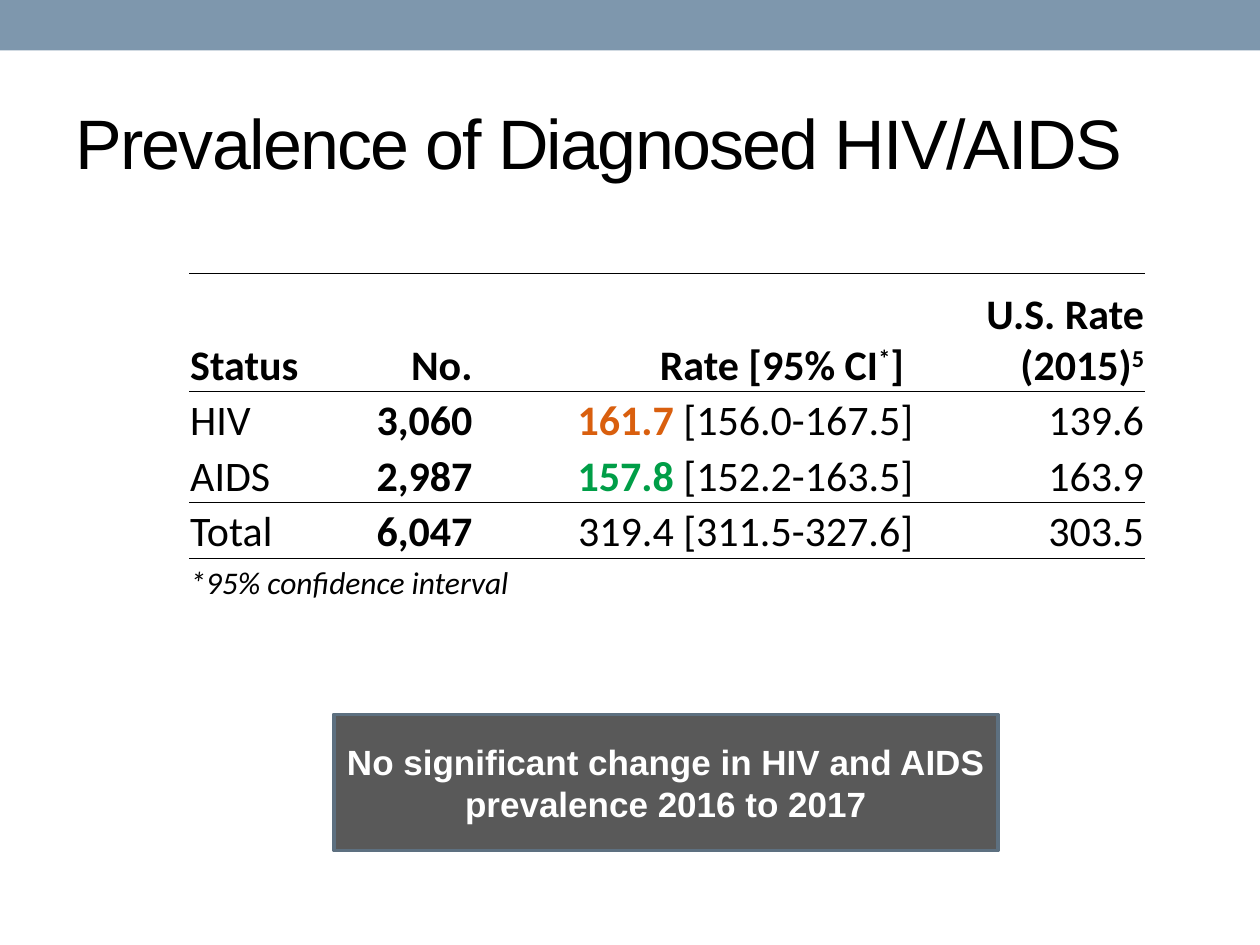
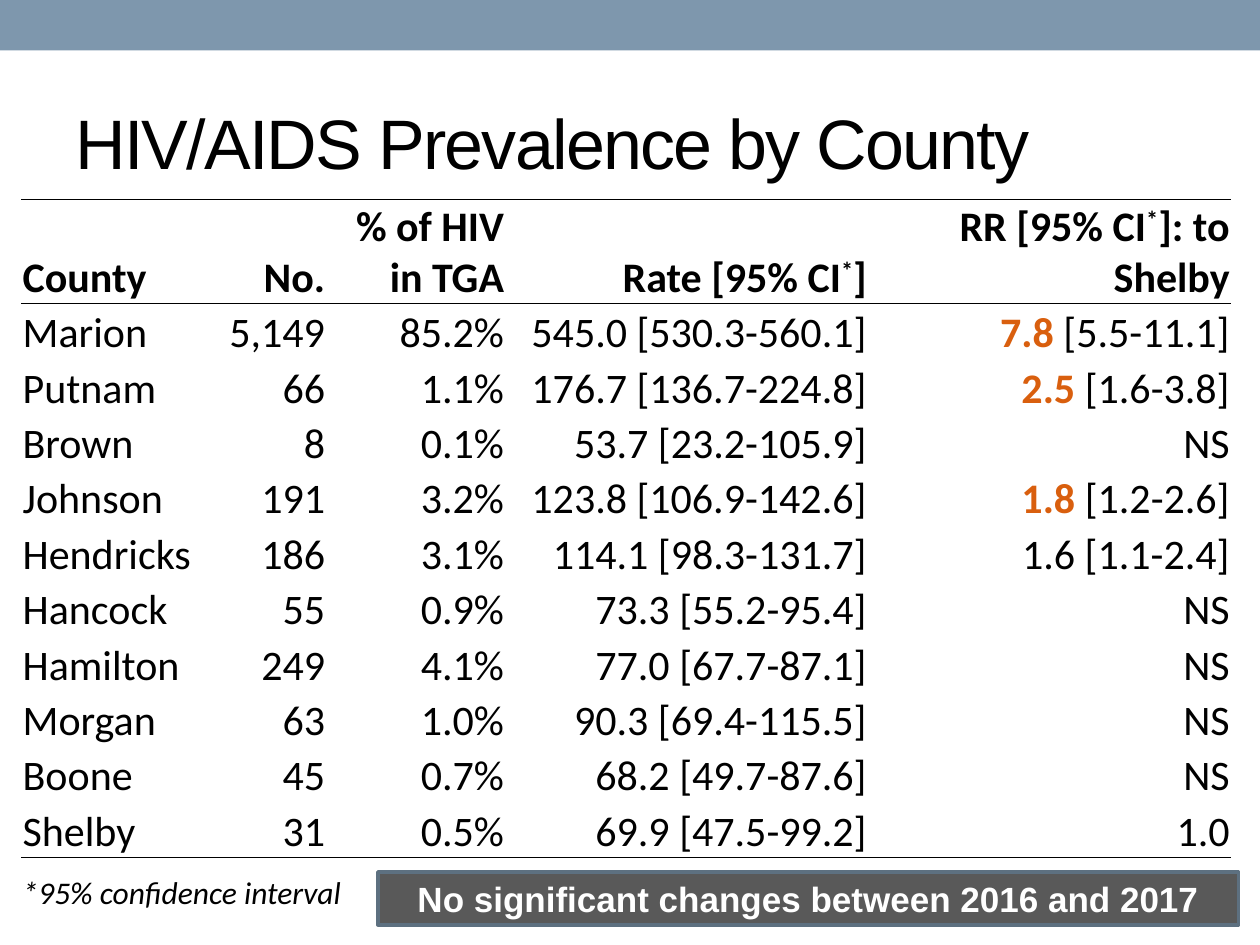
import pptx
import pptx.dml.color
import pptx.enum.shapes
import pptx.enum.text
import pptx.oxml.ns
import pptx.util
from lxml import etree

Inches = pptx.util.Inches
Pt = pptx.util.Pt
Align = pptx.enum.text.PP_ALIGN
Anchor = pptx.enum.text.MSO_ANCHOR

BLACK = "000000"
WHITE = "FFFFFF"
BAND = "7E97AD"
CALLOUT_FILL = "595959"
CALLOUT_LINE = "5D7080"
ORANGE = "D95F0E"
GREEN = "009E47"

TITLE_FONT = {"name": "Arial", "size": Pt(40)}
CALLOUT_FONT = {"name": "Arial", "size": Pt(20), "bold": True}
BODY_FONT = {"name": "Calibri", "size": Pt(24), "bold": False}
BOLD_FONT = {**BODY_FONT, "bold": True}
NOTE_FONT = {**BODY_FONT, "size": Pt(18), "italic": True}
CELL_FORMAT = {
    "margin_left": Inches(0.01),
    "margin_right": Inches(0.01),
    "margin_top": Inches(0.01),
    "margin_bottom": 0,
    "vertical_anchor": Anchor.BOTTOM,
}
FOOTNOTE = "*95% confidence interval"
RATE_HEADING = ["Rate [95% CI", ("*", {"baseline": 30}), "]"]

STATUS_ROWS = [
    ["Status", "No.", RATE_HEADING[:2] + ["] "],
     ["U.S. Rate (2015)", ("5", {"baseline": 30})]],
    ["HIV", "3,060", [("161.7", {"bold": True, "color": ORANGE}), " [156.0-167.5]"], "139.6"],
    ["AIDS", "2,987", [("157.8", {"bold": True, "color": GREEN}), " [152.2-163.5]"], "163.9"],
    ["Total", "6,047", "319.4 [311.5-327.6]", "303.5"],
]


def raised_risk(ratio, interval):
    return [(ratio, {"bold": True, "color": ORANGE}), f" [{interval}]"]


COUNTY_ROWS = [
    ["County", "No.", "% of HIV in TGA", RATE_HEADING,
     ["RR [95% CI", ("*", {"baseline": 30}), "]: to Shelby"]],
    ["Marion", "5,149", "85.2%", "545.0 [530.3-560.1]", raised_risk("7.8", "5.5-11.1")],
    ["Putnam", "66", "1.1%", "176.7 [136.7-224.8]", raised_risk("2.5", "1.6-3.8")],
    ["Brown", "8", "0.1%", "53.7 [23.2-105.9]", "NS"],
    ["Johnson", "191", "3.2%", "123.8 [106.9-142.6]", raised_risk("1.8", "1.2-2.6")],
    ["Hendricks", "186", "3.1%", "114.1 [98.3-131.7]", "1.6 [1.1-2.4]"],
    ["Hancock", "55", "0.9%", "73.3 [55.2-95.4]", "NS"],
    ["Hamilton", "249", "4.1%", "77.0 [67.7-87.1]", "NS"],
    ["Morgan", "63", "1.0%", "90.3 [69.4-115.5]", "NS"],
    ["Boone", "45", "0.7%", "68.2 [49.7-87.6]", "NS"],
    ["Shelby", "31", "0.5%", "69.9 [47.5-99.2]", "1.0"],
]


def rgb(color):
    return pptx.dml.color.RGBColor.from_string(color)


def set_attributes(target, values):
    for name, value in values.items():
        setattr(target, name, value)


def add_run(paragraph, text, font, color=BLACK, baseline=0, spacing=0):
    run = paragraph.add_run()
    run.text = text
    set_attributes(run.font, font)
    run.font.color.rgb = rgb(color)
    properties = run._r.get_or_add_rPr()
    if baseline:
        properties.set("baseline", str(baseline * 1000))
    if spacing:
        properties.set("spc", str(spacing * 100))


def add_rectangle(slide, box, fill, line=None):
    shape = slide.shapes.add_shape(
        pptx.enum.shapes.MSO_SHAPE.RECTANGLE, *map(Inches, box))
    shape.shadow.inherit = False
    shape.fill.solid()
    shape.fill.fore_color.rgb = rgb(fill)
    if line:
        shape.line.color.rgb = rgb(line)
        shape.line.width = Pt(2.08)
    else:
        shape.line.fill.background()
    return shape


def add_titled_slide(presentation, title):
    slide = presentation.slides.add_slide(presentation.slide_layouts[6])
    add_rectangle(slide, (0, 0, 10, 0.4), BAND)
    text_box = slide.shapes.add_textbox(*map(Inches, (0.5, 0.58, 9, 1.08)))
    frame = text_box.text_frame
    set_attributes(frame, {"word_wrap": True, "vertical_anchor": Anchor.MIDDLE})
    add_run(frame.paragraphs[0], title, TITLE_FONT, spacing=-1)
    return slide


def add_callout(slide, box, text):
    frame = add_rectangle(slide, box, CALLOUT_FILL, CALLOUT_LINE).text_frame
    set_attributes(frame, {"word_wrap": True, "vertical_anchor": Anchor.MIDDLE})
    frame.paragraphs[0].alignment = Align.CENTER
    add_run(frame.paragraphs[0], text, CALLOUT_FONT, WHITE)


def set_borders(cell, widths):
    properties = cell._tc.get_or_add_tcPr()
    for side in "LRTB":
        width = widths.get(side, 0)
        line = etree.SubElement(properties, pptx.oxml.ns.qn(f"a:ln{side}"), w=str(Pt(width)))
        if width:
            fill = etree.SubElement(line, pptx.oxml.ns.qn("a:solidFill"))
            etree.SubElement(fill, pptx.oxml.ns.qn("a:srgbClr"), val=BLACK)
        else:
            etree.SubElement(line, pptx.oxml.ns.qn("a:noFill"))
    cell.fill.background()


def fill_cell(cell, content, font, alignment):
    paragraph = cell.text_frame.paragraphs[0]
    paragraph.alignment = alignment
    for part in [content] if isinstance(content, str) else content:
        text, style = (part, {}) if isinstance(part, str) else part
        run_font = {**font, "bold": style.get("bold", font["bold"])}
        add_run(paragraph, text, run_font, style.get("color", BLACK), style.get("baseline", 0))


def add_rate_table(slide, left, top, rows, column_widths, row_heights, rules, bold_columns=()):
    table = slide.shapes.add_table(
        len(rows) + 1, len(column_widths), Inches(left), Inches(top),
        Inches(sum(column_widths)), Inches(sum(row_heights))).table
    set_attributes(table, {"first_row": False, "horz_banding": False})
    for column, width in zip(table.columns, column_widths):
        column.width = Inches(width)
    for index, (row, height) in enumerate(zip(table.rows, row_heights)):
        row.height = Inches(height)
        for cell in row.cells:
            set_attributes(cell, CELL_FORMAT)
            set_borders(cell, {"T": rules.get(index, 0), "B": rules.get(index + 1, 0)})
    for row_index, contents in enumerate(rows):
        for column_index, content in enumerate(contents):
            bold = row_index == 0 or column_index in bold_columns
            fill_cell(table.cell(row_index, column_index), content,
                      BOLD_FONT if bold else BODY_FONT,
                      Align.RIGHT if column_index else Align.LEFT)
    note = table.cell(len(rows), 0)
    note.merge(table.cell(len(rows), len(column_widths) - 1))
    fill_cell(note, FOOTNOTE, NOTE_FONT, Align.LEFT)


def main():
    presentation = pptx.Presentation()
    presentation.slide_width = Inches(10)
    presentation.slide_height = Inches(7.5)

    slide = add_titled_slide(presentation, "Prevalence of Diagnosed HIV/AIDS")
    add_callout(slide, (2.65, 5.67, 5.27, 1.08),
                "No significant change in HIV and AIDS prevalence 2016 to 2017")
    add_rate_table(slide, 1.5, 2.17, STATUS_ROWS, [1.01, 1.25, 3.5, 1.83],
                   [0.94] + [0.44] * 3 + [0.36],
                   {0: 0.5, 1: 0.5, 3: 0.5, 4: 0.5}, bold_columns=(1,))

    slide = add_titled_slide(presentation, "HIV/AIDS Prevalence by County")
    add_rate_table(slide, 0.17, 1.58, COUNTY_ROWS, [1.5, 0.92, 1.42, 2.88, 2.88],
                   [0.83] + [0.44] * 11, {0: 0.5, 1: 0.5, 11: 1})
    add_callout(slide, (3, 6.92, 6.83, 0.42), "No significant changes between 2016 and 2017")

    presentation.save("out.pptx")


if __name__ == "__main__":
    main()
